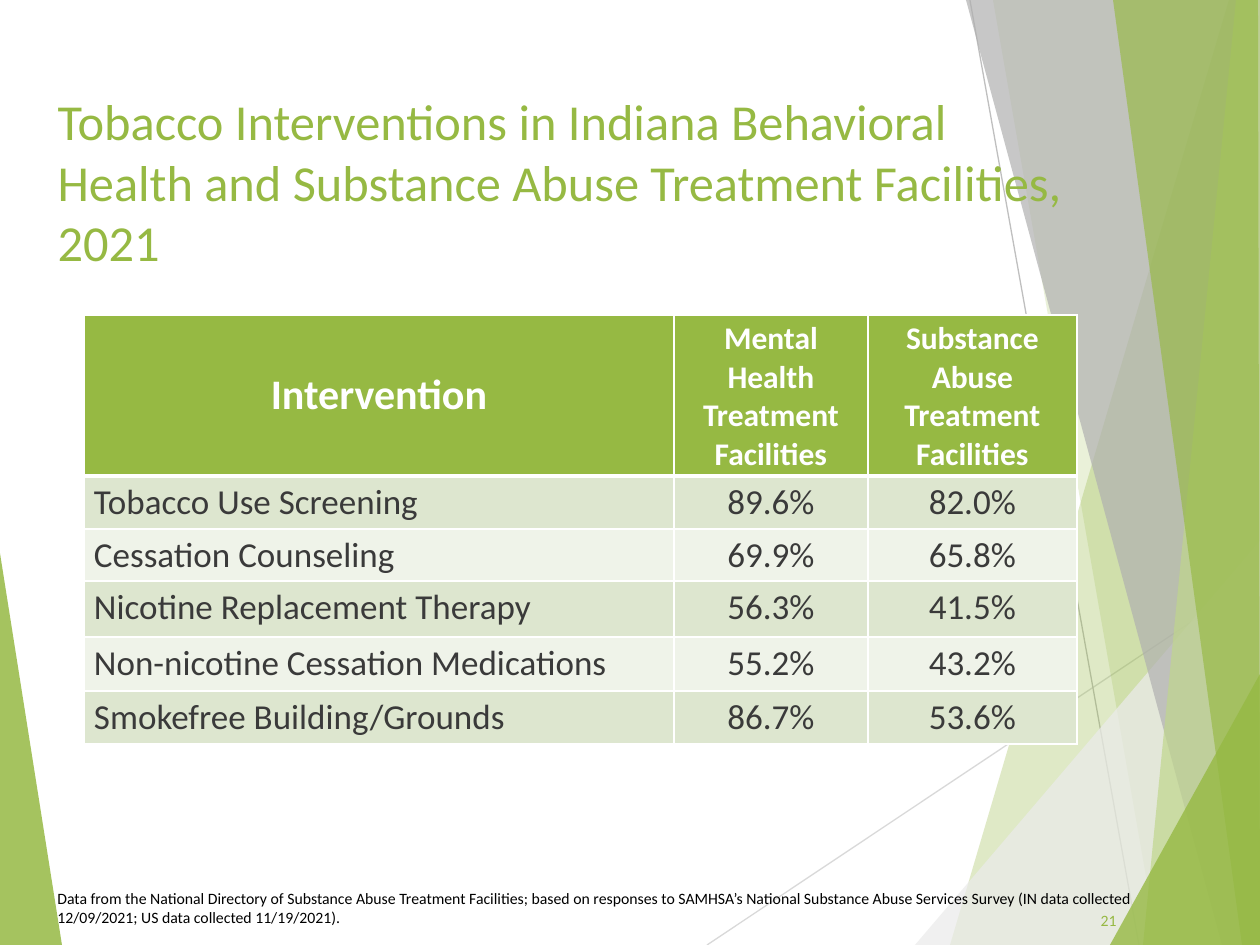
from lxml.etree import SubElement
from pptx import Presentation
from pptx.dml.color import RGBColor
from pptx.enum.shapes import MSO_CONNECTOR
from pptx.enum.text import MSO_ANCHOR, MSO_AUTO_SIZE, PP_ALIGN
from pptx.oxml.ns import qn
from pptx.util import Emu, Pt

SCALE = 914400 / 126
FONT = "Calibri"
C = {
    "green": "96B943", "lime": "C0D68D", "gray": "B0B0B0", "pale": "EBEBEB",
    "line_light": "D9D9D9", "line_mid": "BFBFBF", "white": "FFFFFF",
    "black": "000000", "text": "3A3A3A", "band_dark": "DDE6CF", "band_light": "EFF3E9",
}
LEFT_FACET = ("green", 85, [(0, 553), (62, 945), (0, 945)])
RIGHT_FACETS = [
    ("green", 30, [(1229, 0), (950, 945), (1260, 945), (1260, 0)]),
    ("green", 20, [(993, 0), (1158, 945), (1260, 945), (1260, 0)]),
    ("pale", 72, [(915, 945), (1260, 541), (1260, 945)]),
    ("gray", 70, [(966, 0), (1222, 945), (1260, 945), (1260, 0)]),
    ("lime", 70, [(1236, 0), (1143, 945), (1260, 945), (1260, 0)]),
    ("green", 65, [(1113, 0), (1242, 945), (1260, 945), (1258, 0)]),
    ("green", 80, [(1110, 945), (1260, 674), (1260, 945)]),
]
LINES = [("line_light", (707, 945), (1260, 576)), ("line_mid", (970, 0), (1139, 945))]
HEADERS = [
    (["Intervention"], 24),
    (["Mental Health", "Treatment Facilities"], 18),
    (["Substance Abuse Treatment Facilities"], 18),
]
ROWS = [
    ("Tobacco Use Screening", "89.6%", "82.0%"),
    ("Cessation Counseling", "69.9%", "65.8%"),
    ("Nicotine Replacement Therapy", "56.3%", "41.5%"),
    ("Non-nicotine Cessation Medications", "55.2%", "43.2%"),
    ("Smokefree Building/Grounds", "86.7%", "53.6%"),
]
COL_WIDTHS = [590, 194, 209]
ROW_HEIGHTS = [161, 53, 52, 56, 54, 53]


def px(n):
    return Emu(round(n * SCALE))


def rgb(name):
    return RGBColor.from_string(C[name])


def add_run(p, text, size, color, bold=False):
    r = p.add_run()
    r.text = text
    r.font.name = FONT
    r.font.size = Pt(size)
    r.font.bold = bold
    r.font.color.rgb = rgb(color)


def add_facet(s, box, color, alpha, points):
    x, y = box[:2]
    pts = [(x + a, y + b) for a, b in points]
    builder = s.shapes.build_freeform(*pts[0], scale=SCALE)
    builder.add_line_segments(pts[1:], close=True)
    sp = builder.convert_to_shape()
    sp.shadow.inherit = False
    sp.line.fill.background()
    sp.fill.solid()
    sp.fill.fore_color.rgb = rgb(color)
    clr = sp._element.spPr.find(".//" + qn("a:srgbClr"))
    SubElement(clr, qn("a:alpha"), val=str(alpha * 1000))


def add_backdrop(s, box):
    x, y = box[:2]
    add_facet(s, box, *LEFT_FACET)
    for color, (x1, y1), (x2, y2) in LINES:
        line = s.shapes.add_connector(
            MSO_CONNECTOR.STRAIGHT, px(x + x1), px(y + y1), px(x + x2), px(y + y2))
        line.line.color.rgb = rgb(color)
        line.line.width = Pt(0.75)
        SubElement(line._element.spPr, qn("a:effectLst"))
    for facet in RIGHT_FACETS:
        add_facet(s, box, *facet)


def add_title(s, box, text):
    title = s.shapes.title
    s.shapes._spTree.append(title._element)
    title.left, title.top, title.width, title.height = map(px, box)
    tf = title.text_frame
    tf.word_wrap = True
    tf.auto_size = MSO_AUTO_SIZE.NONE
    tf.vertical_anchor = MSO_ANCHOR.TOP
    p = tf.paragraphs[0]
    p.alignment = PP_ALIGN.LEFT
    add_run(p, text, 28.8, "green")


def add_text(s, box, text, color, align=PP_ALIGN.LEFT, anchor=MSO_ANCHOR.TOP):
    tf = s.shapes.add_textbox(*map(px, box)).text_frame
    tf.word_wrap = True
    tf.vertical_anchor = anchor
    p = tf.paragraphs[0]
    p.alignment = align
    add_run(p, text, 9, color)


def set_borders(cell, top, bottom):
    tcPr = cell._tc.get_or_add_tcPr()
    for side, width in (("L", 1), ("R", 1), ("T", top), ("B", bottom)):
        ln = SubElement(tcPr, qn("a:ln" + side), w=str(Pt(width)))
        fill = SubElement(ln, qn("a:solidFill"))
        SubElement(fill, qn("a:srgbClr"), val=C["white"])


def fill_cell(cell, paragraphs, size, color, fill, align, header=False, top=1):
    set_borders(cell, top, 3 if header else 1)
    cell.fill.solid()
    cell.fill.fore_color.rgb = rgb(fill)
    cell.margin_left = cell.margin_right = px(10)
    cell.margin_top = cell.margin_bottom = px(5)
    cell.vertical_anchor = MSO_ANCHOR.MIDDLE if header else MSO_ANCHOR.TOP
    tf = cell.text_frame
    for i, text in enumerate(paragraphs):
        p = tf.add_paragraph() if i else tf.paragraphs[0]
        p.alignment = align
        add_run(p, text, size, color, header)


def add_interventions(s, box):
    table = s.shapes.add_table(len(ROW_HEIGHTS), len(COL_WIDTHS), *map(px, box)).table
    for col, w in zip(table.columns, COL_WIDTHS):
        col.width = px(w)
    for row, h in zip(table.rows, ROW_HEIGHTS):
        row.height = px(h)
    for j, (paragraphs, size) in enumerate(HEADERS):
        fill_cell(table.cell(0, j), paragraphs, size, "white", "green",
                  PP_ALIGN.CENTER, header=True)
    for i, values in enumerate(ROWS, 1):
        band = "band_dark" if i % 2 else "band_light"
        for j, value in enumerate(values):
            align = PP_ALIGN.CENTER if j else PP_ALIGN.LEFT
            fill_cell(table.cell(i, j), [value], 20, "text", band, align,
                      top=3 if i == 1 else 1)


def main():
    prs = Presentation()
    prs.slide_width, prs.slide_height = px(1260), px(945)
    s = prs.slides.add_slide(prs.slide_layouts[5])
    add_backdrop(s, (0, 0, 1260, 945))
    add_title(s, (45, 84, 1032, 182),
              "Tobacco Interventions in Indiana Behavioral Health and "
              "Substance Abuse Treatment Facilities, 2021")
    add_text(s, (1058, 895, 71, 50), "21", "green", PP_ALIGN.RIGHT, MSO_ANCHOR.MIDDLE)
    add_text(s, (45, 883, 1140, 50),
             "Data from the National Directory of Substance Abuse Treatment Facilities; "
             "based on responses to SAMHSA’s National Substance Abuse Services Survey "
             "(IN data collected 12/09/2021; US data collected 11/19/2021).", "black")
    add_interventions(s, (84, 315, sum(COL_WIDTHS), sum(ROW_HEIGHTS)))
    prs.save("out.pptx")


if __name__ == "__main__":
    main()
